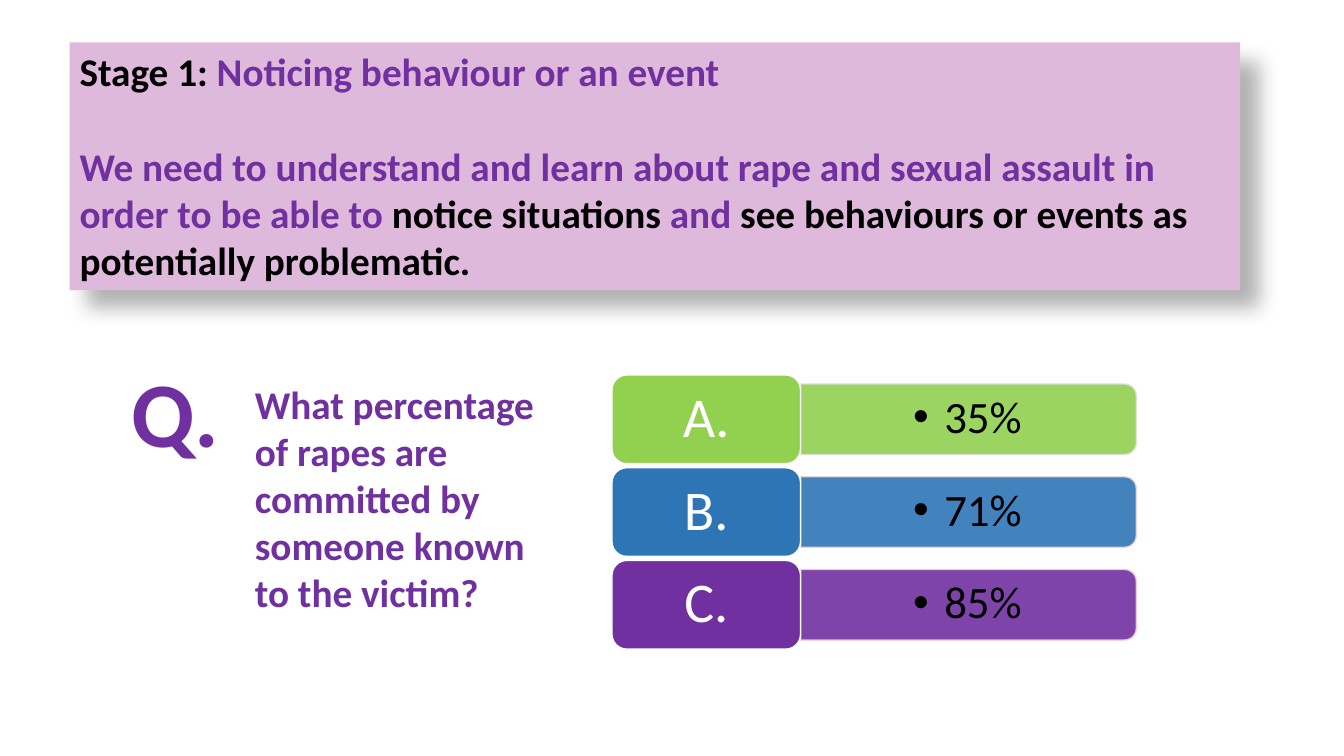
from lxml.etree import SubElement
from pptx import Presentation
from pptx.dml.color import RGBColor
from pptx.enum.shapes import MSO_SHAPE
from pptx.enum.text import MSO_ANCHOR, PP_ALIGN
from pptx.oxml.ns import qn
from pptx.util import Inches, Pt

PURPLE, BLACK, WHITE = "7030A0", "000000", "FFFFFF"


def rgb(value):
    return RGBColor.from_string(value)


def add_run(paragraph, text, size, color, bold=False):
    run = paragraph.add_run()
    run.text = text
    run.font.name = "Calibri"
    run.font.size = Pt(size)
    run.font.bold = bold
    run.font.color.rgb = rgb(color)


def add_text_box(slide, left, top, width, height, wrap=True):
    frame = slide.shapes.add_textbox(
        Inches(left), Inches(top), Inches(width), Inches(height)).text_frame
    frame.word_wrap = wrap
    return frame


def add_block(slide, preset, left, top, width, height, fill, line=None):
    block = slide.shapes.add_shape(
        preset, Inches(left), Inches(top), Inches(width), Inches(height))
    block.shadow.inherit = False
    block.fill.solid()
    block.fill.fore_color.rgb = rgb(fill)
    if line:
        block.line.color.rgb = rgb(line)
        block.line.width = Pt(1)
    else:
        block.line.fill.background()
    return block


def set_alpha(color_parent, percent):
    for color in color_parent.iter(qn("a:srgbClr")):
        SubElement(color, qn("a:alpha"), val=str(percent * 1000))


def add_soft_shadow(block):
    effects = block.element.spPr.find(qn("a:effectLst"))
    shadow = SubElement(effects, qn("a:outerShdw"), blurRad=str(Pt(15)),
                        dist=str(Pt(18)), dir="2700000", algn="ctr", rotWithShape="0")
    SubElement(shadow, qn("a:srgbClr"), val=BLACK)
    set_alpha(shadow, 30)


def add_stage_panel(slide, left, top, width, height):
    panel = add_block(slide, MSO_SHAPE.RECTANGLE, left, top, width, height, "DFB9DC")
    add_soft_shadow(panel)
    frame = panel.text_frame
    frame.word_wrap = True
    frame.vertical_anchor = MSO_ANCHOR.TOP

    # Stage heading
    heading = frame.paragraphs[0]
    heading.alignment = PP_ALIGN.LEFT
    add_run(heading, "Stage 1:", 28, BLACK, True)
    add_run(heading, " Noticing behaviour or an event", 28, PURPLE, True)

    # Explanation, one line below the heading
    explanation = frame.add_paragraph()
    explanation.alignment = PP_ALIGN.LEFT
    explanation.space_before = Pt(34)
    for text, color in (
            ("We need to understand and learn about rape and sexual assault in "
             "order to be able to ", PURPLE),
            ("notice situations ", BLACK),
            ("and ", PURPLE),
            ("see behaviours or events as potentially problematic.", BLACK)):
        add_run(explanation, text, 28, color, True)


def add_question(slide, left, top, width, height):
    # Large initial
    initial = add_text_box(slide, left, top, 1.08, 1.21, wrap=False).paragraphs[0]
    initial.alignment = PP_ALIGN.CENTER
    add_run(initial, "Q.", 66, PURPLE, True)

    # Question wording
    frame = add_text_box(slide, left + 1.23, top + 0.25, width - 1.23, height - 0.25)
    lines = ("What percentage", "of rapes are committed by someone known",
             "to the victim?")
    for index, text in enumerate(lines):
        paragraph = frame.add_paragraph() if index else frame.paragraphs[0]
        add_run(paragraph, text, 28, PURPLE, True)


def add_answer(slide, left, top, width, height, letter, value, fill, outline):
    label_width, bar_height = 1.87, 0.7
    bar_width = width - label_width
    bar_left = left + label_width
    middle = top + height / 2

    # Value bar: an upright shape turned so its round end points right
    bar = add_block(slide, MSO_SHAPE.ROUND_2_SAME_RECTANGLE,
                    bar_left + (bar_width - bar_height) / 2, middle - bar_width / 2,
                    bar_height, bar_width, fill, outline)
    bar.rotation = 90
    set_alpha(bar.element.spPr, 90)

    # Bulleted value
    frame = add_text_box(slide, bar_left + 0.01, middle - 0.32, bar_width - 0.04, 0.63)
    frame.vertical_anchor = MSO_ANCHOR.MIDDLE
    frame.margin_left = frame.margin_right = Inches(0.13)
    frame.margin_top = frame.margin_bottom = Inches(0.07)
    paragraph = frame.paragraphs[0]
    paragraph.alignment = PP_ALIGN.CENTER
    paragraph.level = 1
    paragraph.line_spacing = 0.9
    properties = paragraph._p.get_or_add_pPr()
    properties.set("marL", str(Inches(0.31)))
    properties.set("indent", str(-Inches(0.31)))
    SubElement(properties, qn("a:buFont"), typeface="Arial")
    SubElement(properties, qn("a:buChar"), char="•")
    add_run(paragraph, value, 32, BLACK)

    # Letter label
    label = add_block(slide, MSO_SHAPE.ROUNDED_RECTANGLE, left, top,
                      label_width, height, fill, WHITE)
    label.text_frame.vertical_anchor = MSO_ANCHOR.MIDDLE
    caption = label.text_frame.paragraphs[0]
    caption.alignment = PP_ALIGN.CENTER
    caption.line_spacing = 0.9
    add_run(caption, letter, 40, WHITE)


def add_answers(slide, left, top, width, height):
    answers = (("A.", "35%", "92D050", "E1E1E1"),
               ("B.", "71%", "2E75B6", "F1D5D5"),
               ("C.", "85%", PURPLE, "FFCBCB"))
    row_height = 0.88
    pitch = (height - row_height) / (len(answers) - 1)
    for index, answer in enumerate(answers):
        add_answer(slide, left, top + index * pitch, width, row_height, *answer)


def main():
    deck = Presentation()
    deck.slide_width, deck.slide_height = Inches(13.33), Inches(7.5)
    slide = deck.slides.add_slide(deck.slide_layouts[6])
    add_stage_panel(slide, 0.69, 0.42, 11.61, 2.46)
    add_question(slide, 1.2, 3.47, 4.87, 2.71)
    add_answers(slide, 6.07, 3.72, 5.2, 2.72)
    deck.save("out.pptx")


if __name__ == "__main__":
    main()
